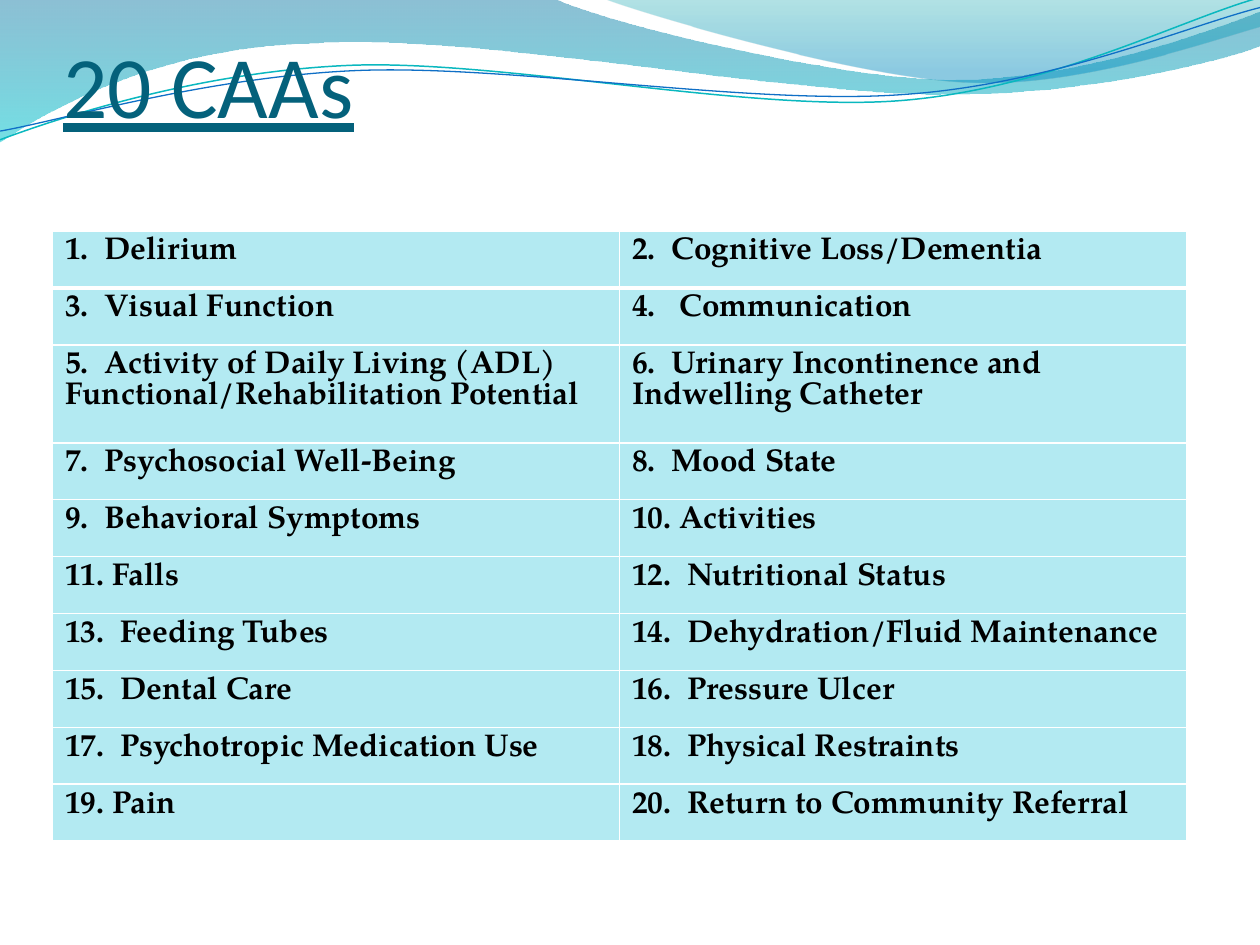
from lxml import etree
from pptx import Presentation
from pptx import util as u
from pptx.dml.color import RGBColor
from pptx.enum import text
from pptx.oxml import ns

Pt = u.Pt
TEAL_DARK = RGBColor(0x04, 0x61, 0x7B)
BLACK = RGBColor(0, 0, 0)
WHITE = RGBColor(0xFF, 0xFF, 0xFF)
CELL = RGBColor(0xB3, 0xEA, 0xF2)
LINE_TEAL = RGBColor(0x0A, 0xB8, 0xBF)
LINE_BLUE = RGBColor(0x0F, 0x6F, 0xC6)
DEEP_BLUE = RGBColor(0x00, 0x74, 0xA1)
CYAN = RGBColor(0x00, 0xC6, 0xCF)
GREEN_TEAL = RGBColor(0x00, 0xA1, 0xA9)
SKY = RGBColor(0x00, 0x8B, 0xBF)

TITLE_FMT = {"name": "Calibri", "size": Pt(50), "underline": True, "bold": False}
CELL_FMT = {"name": "TeX Gyre Pagella", "size": Pt(18), "bold": True}

BANDS = [
    ((-0.7, 0),
     [[(316.8, -0.7)],
      [(342.7, 12.2), (478.1, 45.4), (545.8, 45.4)],
      [(614.2, 45.4), (689.8, 18.7), (720, 6.5)],
      [(720.7, 25.9)],
      [(707.8, 31.7), (626.4, 54.7), (537.1, 54)],
      [(447.8, 54), (275, 20.2), (185, 24.5)],
      [(92.9, 25.9), (33.1, 59.8), (-0.7, 81.4)]],
     [(0, DEEP_BLUE, 45), (1, CYAN, 55)]),
    ((344.9, -0.7),
     [[(366.5, 7.9), (491, 44.6), (553.7, 46.8)],
      [(616.3, 49.7), (691.9, 23), (720, 15.1)],
      [(720, 0)]],
     [(0, GREEN_TEAL, 30), (0.8, SKY, 45)]),
]
LINES = [
    ((0, 79.9),
     [[(34.6, 67), (113.8, 41), (199.4, 37.4)],
      [(284.4, 33.8), (427, 64.1), (513.4, 57.6)],
      [(599.8, 51.1), (675.4, 10.8), (720, -1.4)]],
     LINE_TEAL, 0.85),
    ((0, 74.9),
     [[(33.8, 69.1), (118.1, 43.9), (203.8, 40.3)],
      [(290.2, 36.7), (429.8, 60.5), (516.2, 54)],
      [(601.9, 48.2), (677.5, 15.1), (720, 4.3)]],
     LINE_BLUE, 0.75),
]

ROWS = [
    ("1.  Delirium", "2.  Cognitive Loss/Dementia"),
    ("3.  Visual Function", (4, "Communication")),
    ("5.  Activity of Daily Living (ADL)\nFunctional/Rehabilitation Potential",
     "6.  Urinary Incontinence and Indwelling Catheter"),
    ("7.  Psychosocial Well-Being", "8.  Mood State"),
    ("9.  Behavioral Symptoms", (10, "Activities")),
    ((11, "Falls"), "12.  Nutritional Status"),
    ("13.  Feeding Tubes", "14.  Dehydration/Fluid Maintenance"),
    ("15.  Dental Care", "16.  Pressure Ulcer"),
    ("17.  Psychotropic Medication Use", "18.  Physical Restraints"),
    ((19, "Pain"), "20.  Return to Community Referral"),
]


def set_font(font, fmt, color):
    for key, value in fmt.items():
        setattr(font, key, value)
    font.color.rgb = color


def add_curve(s, x, y, start, segments, closed):
    points = [(Pt(x + px), Pt(y + py)) for seg in segments for px, py in seg]
    fb = s.shapes.build_freeform(Pt(x + start[0]), Pt(y + start[1]))
    fb.add_line_segments(points, close=closed)
    sp = fb.convert_to_shape()
    sp.shadow.inherit = False
    straight = iter(list(sp._element.iter(ns.qn("a:lnTo"))))
    for seg in segments:
        steps = [next(straight) for _ in seg]
        if len(steps) == 3:
            curve = etree.Element(ns.qn("a:cubicBezTo"))
            steps[0].addprevious(curve)
            for step in steps:
                curve.append(step[0])
                step.getparent().remove(step)
    return sp


def add_waves(s, x, y):
    for start, segments, stops in BANDS:
        sp = add_curve(s, x, y, start, segments, True)
        sp.line.fill.background()
        sp.fill.gradient()
        sp.fill.gradient_angle = 270
        for stop, (position, color, _) in zip(sp.fill.gradient_stops, stops):
            stop.position = position
            stop.color.rgb = color
        colors = list(sp._element.spPr.iter(ns.qn("a:srgbClr")))
        for clr, (_, _, alpha) in zip(colors, stops):
            etree.SubElement(clr, ns.qn("a:alpha"), val=str(alpha * 1000))
    for start, segments, color, width in LINES:
        sp = add_curve(s, x, y, start, segments, False)
        sp.fill.background()
        sp.line.color.rgb = color
        sp.line.width = Pt(width)


def add_title(s, x, y, w, h):
    sp = s.shapes.title
    s.shapes._spTree.append(sp._element)
    sp.left, sp.top, sp.width, sp.height = map(Pt, (x, y, w, h))
    tf = sp.text_frame
    fmt = {"margin_left": 0, "margin_right": 0, "margin_top": Pt(3.6), "margin_bottom": 0,
           "vertical_anchor": text.MSO_ANCHOR.BOTTOM, "auto_size": text.MSO_AUTO_SIZE.NONE}
    for key, value in fmt.items():
        setattr(tf, key, value)
    p = tf.paragraphs[0]
    p.alignment = text.PP_ALIGN.LEFT
    r = p.add_run()
    r.text = "20 CAAs"
    set_font(r.font, TITLE_FMT, TEAL_DARK)


def number_paragraph(p, start):
    pPr = p._p.get_or_add_pPr()
    pPr.set("marL", str(Pt(27)))
    pPr.set("indent", str(-Pt(27)))
    etree.SubElement(pPr, ns.qn("a:buFont"), typeface="+mj-lt")
    etree.SubElement(pPr, ns.qn("a:buAutoNum"), type="arabicPeriod", startAt=str(start))


def set_borders(cell, widths):
    tcPr = cell._tc.get_or_add_tcPr()
    for i, (side, width) in enumerate(widths.items()):
        ln = etree.Element(ns.qn("a:ln" + side), w=str(Pt(width)))
        fill = etree.SubElement(ln, ns.qn("a:solidFill"))
        etree.SubElement(fill, ns.qn("a:srgbClr"), val=str(WHITE))
        tcPr.insert(i, ln)


def fill_cell(cell, content, row):
    start, words = content if isinstance(content, tuple) else (None, content)
    cell.fill.solid()
    cell.fill.fore_color.rgb = CELL
    set_borders(cell, {"L": 1, "R": 1, "T": 3 if row == 1 else 1, "B": 3 if row == 0 else 1})
    tf = cell.text_frame
    tf.text = words
    for p in tf.paragraphs:
        if start:
            number_paragraph(p, start)
        for r in p.runs:
            set_font(r.font, CELL_FMT, BLACK)


def add_caa_table(s, x, y, w, h):
    tall = 56
    short = (h - tall) / (len(ROWS) - 1)
    tbl = s.shapes.add_table(len(ROWS), 2, Pt(x), Pt(y), Pt(w), Pt(h)).table
    tbl.first_row = tbl.horz_banding = False
    for i, contents in enumerate(ROWS):
        tbl.rows[i].height = Pt(tall if i == 2 else short)
        for j, content in enumerate(contents):
            fill_cell(tbl.cell(i, j), content, i)


def main():
    prs = Presentation()
    prs.slide_width, prs.slide_height = Pt(720), Pt(540)
    s = prs.slides.add_slide(prs.slide_layouts[5])
    add_waves(s, 0, 0)
    add_title(s, 36, 12, 648, 66)
    add_caa_table(s, 30, 132, 648, 348.8)
    prs.save("out.pptx")


if __name__ == "__main__":
    main()
